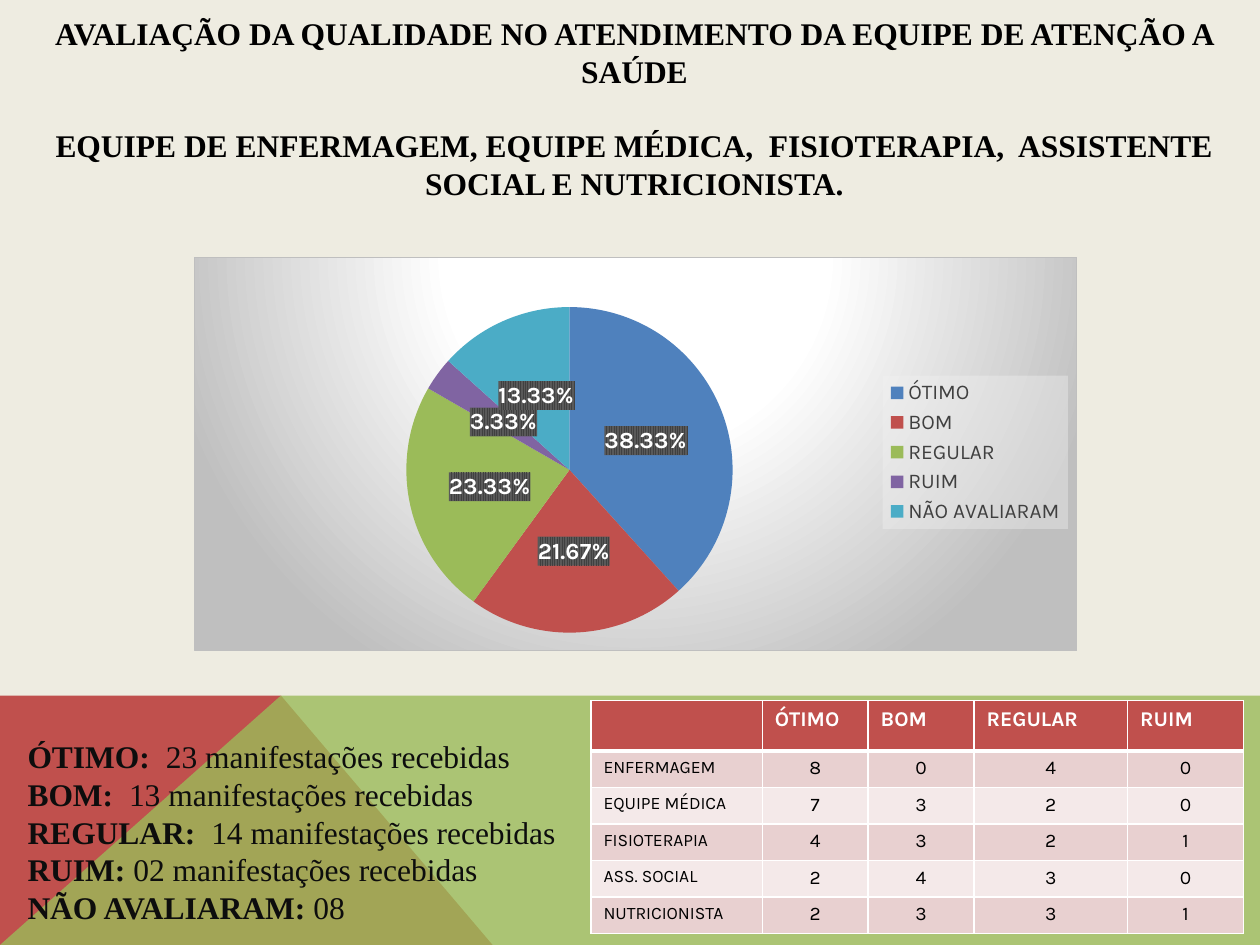
from lxml import etree
from pptx import Presentation
from pptx.chart.data import CategoryChartData
from pptx.dml.color import RGBColor
from pptx.enum.chart import XL_CHART_TYPE, XL_LABEL_POSITION, XL_LEGEND_POSITION
from pptx.enum.text import MSO_ANCHOR, PP_ALIGN
from pptx.oxml import parse_xml
from pptx.oxml.ns import nsdecls, qn
from pptx.util import Inches, Pt

PIE = XL_CHART_TYPE.PIE
LABEL_CENTER = XL_LABEL_POSITION.CENTER
LEGEND_RIGHT = XL_LEGEND_POSITION.RIGHT
MIDDLE, TOP = MSO_ANCHOR.MIDDLE, MSO_ANCHOR.TOP
CENTER, LEFT = PP_ALIGN.CENTER, PP_ALIGN.LEFT

TITLE = [
    "AVALIAÇÃO DA QUALIDADE NO ATENDIMENTO DA EQUIPE DE ATENÇÃO A SAÚDE",
    "EQUIPE DE ENFERMAGEM, EQUIPE MÉDICA,  FISIOTERAPIA,  ASSISTENTE SOCIAL E NUTRICIONISTA.",
]
TOTALS = [
    ("ÓTIMO:  ", "23 manifestações recebidas"),
    ("BOM:  ", "13 manifestações recebidas"),
    ("REGULAR:  ", "14 manifestações recebidas"),
    ("RUIM: ", "02 manifestações recebidas"),
    ("NÃO AVALIARAM: ", "08"),
]
RATINGS = [  # category, percentage, slice colour
    ("ÓTIMO", 38.33, "4F81BD"),
    ("BOM", 21.67, "C0504D"),
    ("REGULAR", 23.33, "9BBB59"),
    ("RUIM", 3.33, "8064A2"),
    ("NÃO AVALIARAM", 13.33, "4BACC6"),
]
TEAM_ROWS = [
    ("", "ÓTIMO", "BOM", "REGULAR", "RUIM"),
    ("ENFERMAGEM", 8, 0, 4, 0),
    ("EQUIPE MÉDICA", 7, 3, 2, 0),
    ("FISIOTERAPIA", 4, 3, 2, 1),
    ("ASS. SOCIAL", 2, 4, 3, 0),
    ("NUTRICIONISTA", 2, 3, 3, 1),
]
COL_WIDTHS = [1.36, 0.84, 0.84, 1.22, 0.92]
HEADER_HEIGHT, ROW_HEIGHT = 0.3, 0.29

THEME = {
    "background": "EEECE1", "red": "C0504D", "green": "9BBB59", "border": "FFFFFF",
    "bands": ("F4E9E9", "E8D0D0"),
    "title": dict(name="Times New Roman", size=18, color="000000", bold=True),
    "term": dict(name="Times New Roman", size=18, color="0D0D0D", bold=True),
    "total": dict(name="Times New Roman", size=18, color="0D0D0D", bold=False),
    "chart": dict(name="Karla", size=10, color="000000"),
    "legend": dict(name="Karla", size=12, color="404040"),
    "label": dict(name="Karla", size=13.3, color="FFFFFF", bold=True),
    "header": dict(name="Karla", size=12, color="FFFFFF", bold=True),
    "team": dict(name="Karla", size=10, color="000000", bold=False),
    "count": dict(name="Karla", size=11, color="000000", bold=False),
}
CHART_FILL = """<a:gradFill><a:gsLst>
<a:gs pos="0"><a:srgbClr val="FFFFFF"/></a:gs><a:gs pos="39000"><a:srgbClr val="FFFFFF"/></a:gs>
<a:gs pos="100000"><a:srgbClr val="BFBFBF"/></a:gs></a:gsLst>
<a:path path="circle"><a:fillToRect l="50000" t="-80000" r="50000" b="180000"/></a:path></a:gradFill>
<a:ln w="9525"><a:solidFill><a:srgbClr val="BFBFBF"/></a:solidFill></a:ln>"""
LEGEND_FILL = """<a:solidFill><a:srgbClr val="F2F2F2"><a:alpha val="39000"/></a:srgbClr></a:solidFill>
<a:ln><a:noFill/></a:ln>"""
LABEL_FILL = """<a:pattFill prst="narVert"><a:fgClr><a:srgbClr val="404040"/></a:fgClr>
<a:bgClr><a:srgbClr val="595959"/></a:bgClr></a:pattFill><a:ln><a:noFill/></a:ln>"""


def rgb(value):
    return RGBColor.from_string(value)


def style_font(font, style):
    values = dict(style)
    font.color.rgb = rgb(values.pop("color"))
    values["size"] = Pt(values["size"])
    for key, value in values.items():
        setattr(font, key, value)


def add_run(p, text, style):
    r = p.add_run()
    r.text = text
    style_font(r.font, THEME[style])


def add_text(slide, box, anchor, align, paragraphs, gap=0):
    """Each paragraph is a list of (text, style) runs; gap is the space between paragraphs."""
    tf = slide.shapes.add_textbox(*map(Inches, box)).text_frame
    tf.word_wrap = True
    tf.vertical_anchor = anchor
    for i, runs in enumerate(paragraphs):
        p = tf.add_paragraph() if i else tf.paragraphs[0]
        p.alignment = align
        p.space_before = Pt(gap if i else 0)
        for text, style in runs:
            add_run(p, text, style)


def add_polygon(slide, points, color, opacity=100):
    (x, y), *rest = [(Inches(px), Inches(py)) for px, py in points]
    builder = slide.shapes.build_freeform(x, y)
    builder.add_line_segments(rest, close=True)
    s = builder.convert_to_shape()
    s.shadow.inherit = False
    s.fill.solid()
    s.fill.fore_color.rgb = rgb(color)
    s.line.fill.background()
    if opacity < 100:
        clr = s.fill._xPr.find(".//" + qn("a:srgbClr"))
        etree.SubElement(clr, qn("a:alpha")).set("val", str(opacity * 1000))


def decorate(element, content):
    """Put fill and line before the text properties of a chart part."""
    sp_pr = parse_xml(f'<c:spPr {nsdecls("c", "a")}>{content}</c:spPr>')
    element.find(qn("c:txPr")).addprevious(sp_pr)


def place(element, index, target, x, y, w, h):
    """Give a chart part a manual layout in fractions of the chart."""
    for old in element.findall(qn("c:layout")):
        element.remove(old)
    inner = f'<c:layoutTarget val="{target}"/>' if target else ""
    sizes = "".join(f'<c:{k} val="{v}"/>' for k, v in zip("xywh", (x, y, w, h)))
    element.insert(index, parse_xml(
        f'<c:layout {nsdecls("c")}><c:manualLayout>{inner}<c:xMode val="edge"/>'
        f'<c:yMode val="edge"/>{sizes}</c:manualLayout></c:layout>'))


def add_ratings_chart(slide):
    data = CategoryChartData()
    data.categories = [name for name, _, _ in RATINGS]
    data.add_series("Series 1", [value for _, value, _ in RATINGS])
    box = map(Inches, (1.54, 2.04, 7.01, 3.13))
    chart = slide.shapes.add_chart(PIE, *box, data).chart
    chart.has_title = False
    style_font(chart.font, THEME["chart"])
    decorate(chart._chartSpace, CHART_FILL)
    place(chart._chartSpace.chart.plotArea, 0, "inner", 0.24, 0.12, 0.37, 0.84)

    chart.has_legend = True
    legend = chart.legend
    legend.position = LEGEND_RIGHT
    legend.include_in_layout = False
    style_font(legend.font, THEME["legend"])
    decorate(legend._element, LEGEND_FILL)
    place(legend._element, 1, None, 0.78, 0.3, 0.21, 0.39)

    plot = chart.plots[0]
    plot.vary_by_categories = True
    series = plot.series[0]
    for i, (_, _, color) in enumerate(RATINGS):
        fill = series.points[i].format.fill
        fill.solid()
        fill.fore_color.rgb = rgb(color)
    labels = series.data_labels
    options = dict(show_percentage=True, show_value=False, number_format="0.00%",
                   number_format_is_linked=False, position=LABEL_CENTER)
    for key, value in options.items():
        setattr(labels, key, value)
    style_font(labels.font, THEME["label"])
    decorate(labels._element, LABEL_FILL)


def set_borders(cell, widths):
    tc_pr = cell._tc.get_or_add_tcPr()
    for i, (side, width) in enumerate(zip("LRTB", widths)):
        tc_pr.insert(i, parse_xml(
            f'<a:ln{side} {nsdecls("a")} w="{Pt(width)}"><a:solidFill>'
            f'<a:srgbClr val="{THEME["border"]}"/></a:solidFill></a:ln{side}>'))


def add_team_table(slide):
    heights = [HEADER_HEIGHT] + [ROW_HEIGHT] * (len(TEAM_ROWS) - 1)
    box = map(Inches, (4.69, 5.56, sum(COL_WIDTHS), sum(heights)))
    table = slide.shapes.add_table(len(TEAM_ROWS), len(COL_WIDTHS), *box).table
    for column, width in zip(table.columns, COL_WIDTHS):
        column.width = Inches(width)
    for i, (row, height) in enumerate(zip(TEAM_ROWS, heights)):
        table.rows[i].height = Inches(height)
        for j, value in enumerate(row):
            cell = table.cell(i, j)
            cell.fill.solid()
            cell.fill.fore_color.rgb = rgb(THEME["bands"][i % 2] if i else THEME["red"])
            set_borders(cell, (1, 1, 3 if i == 1 else 1, 1 if i else 3))
            p = cell.text_frame.paragraphs[0]
            p.alignment = CENTER if i and j else LEFT
            style = "header" if i == 0 else "count" if j else "team"
            if value != "":
                add_run(p, str(value), style)


def main():
    prs = Presentation()
    prs.slide_width, prs.slide_height = Inches(10), Inches(7.5)
    slide = prs.slides.add_slide(prs.slide_layouts[6])
    slide.background.fill.solid()
    slide.background.fill.fore_color.rgb = rgb(THEME["background"])
    add_polygon(slide, [(0, 7.5), (0, 5.52), (2.23, 5.52), (3.91, 7.5)], THEME["red"])
    add_polygon(slide, [(0, 7.5), (2.23, 5.52), (10, 5.52), (10, 7.5)], THEME["green"], 80)
    add_text(slide, (0.31, 0.31, 9.45, 1.09), MIDDLE, CENTER,
             [[(text, "title")] for text in TITLE], gap=21)
    add_text(slide, (0.12, 5.8, 4.45, 2.22), TOP, LEFT,
             [[(term, "term"), (total, "total")] for term, total in TOTALS])
    add_ratings_chart(slide)
    add_team_table(slide)
    prs.save("out.pptx")


if __name__ == "__main__":
    main()
